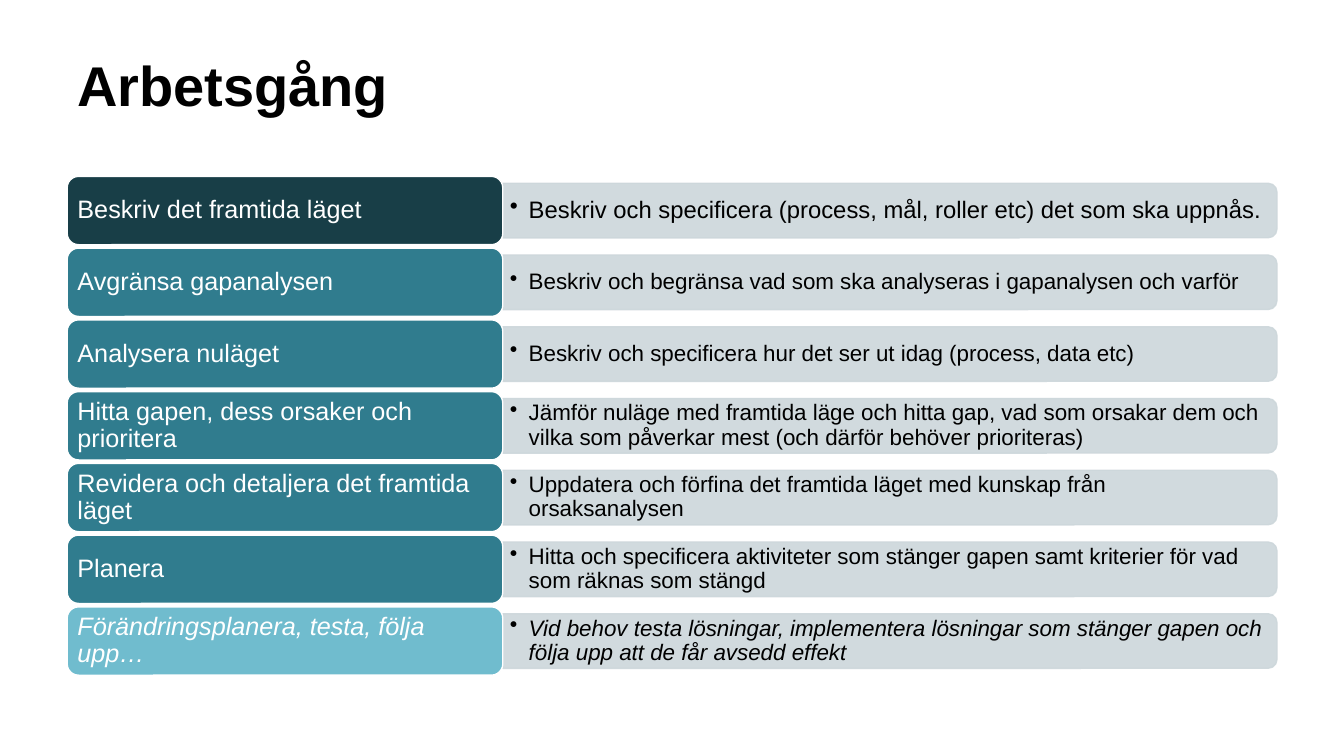
from dataclasses import dataclass

from lxml.etree import SubElement
from pptx import Presentation
from pptx.dml.color import RGBColor
from pptx.enum.shapes import MSO_SHAPE
from pptx.enum.text import MSO_ANCHOR
from pptx.oxml.ns import qn
from pptx.util import Pt


@dataclass(frozen=True)
class Theme:
    font: str = "Arial"
    ink: str = "000000"
    paper: str = "FFFFFF"
    bar: str = "CDD7DB"
    first: str = "183E47"
    step: str = "307C8E"
    last: str = "70BCCE"
    title: int = 40
    label: int = 18
    lead: int = 17
    note: int = 16


class Board:
    def __init__(self, slide, theme):
        self.slide = slide
        self.theme = theme

    def fill_text(self, shape, text, size, color, pad, space=0.9, bold=False,
                  slant=False, bullet=False, anchor=MSO_ANCHOR.MIDDLE):
        frame = shape.text_frame
        frame.word_wrap = True
        frame.vertical_anchor = anchor
        frame.margin_left = frame.margin_right = Pt(pad[0])
        frame.margin_top = frame.margin_bottom = Pt(pad[1])
        frame.text = text
        para = frame.paragraphs[0]
        para.line_spacing = space
        props = para._p.get_or_add_pPr()
        props.set("algn", "l")
        if bullet:
            props.set("marL", str(Pt(13.5)))
            props.set("indent", str(-Pt(13.5)))
            SubElement(props, qn("a:buChar"), char="•")
        font = para.runs[0].font
        font.name = self.theme.font
        font.size = Pt(size)
        font.bold = bold
        font.italic = slant
        font.color.rgb = RGBColor.from_string(color)

    def text(self, x, y, w, h, words, size, **style):
        box = self.slide.shapes.add_textbox(Pt(x), Pt(y), Pt(w), Pt(h))
        self.fill_text(box, words, size, self.theme.ink, **style)

    def shape(self, kind, x, y, w, h, fill, line):
        item = self.slide.shapes.add_shape(kind, Pt(x), Pt(y), Pt(w), Pt(h))
        item.shadow.inherit = False
        item.fill.solid()
        item.fill.fore_color.rgb = RGBColor.from_string(fill)
        item.line.color.rgb = RGBColor.from_string(line)
        item.line.width = Pt(1)
        return item

    def bar(self, x, mid, w, h):
        # A quarter turn puts the two round corners on the right
        color = self.theme.bar
        item = self.shape(MSO_SHAPE.ROUND_2_SAME_RECTANGLE,
                          x + (w - h) / 2, mid - w / 2, h, w, color, color)
        item.rotation = 90
        for tint in item._element.spPr.iter(qn("a:srgbClr")):
            SubElement(tint, qn("a:alpha"), val="90000")

    def label(self, x, y, w, h, words, fill, slant):
        item = self.shape(MSO_SHAPE.ROUNDED_RECTANGLE, x, y, w, h, fill,
                          self.theme.paper)
        self.fill_text(item, words, self.theme.label, self.theme.paper,
                       pad=(5, 5), slant=slant)


STEPS = [
    ("Beskriv det framtida läget",
     "Beskriv och specificera (process, mål, roller etc) det som ska uppnås."),
    ("Avgränsa gapanalysen",
     "Beskriv och begränsa vad som ska analyseras i gapanalysen och varför"),
    ("Analysera nuläget",
     "Beskriv och specificera hur det ser ut idag (process, data etc)"),
    ("Hitta gapen, dess orsaker och prioritera",
     "Jämför nuläge med framtida läge och hitta gap, vad som orsakar dem "
     "och vilka som påverkar mest (och därför behöver prioriteras)"),
    ("Revidera och detaljera det framtida läget",
     "Uppdatera och förfina det framtida läget med kunskap från "
     "orsaksanalysen"),
    ("Planera",
     "Hitta och specificera aktiviteter som stänger gapen samt kriterier "
     "för vad som räknas som stängd"),
    ("Förändringsplanera, testa, följa upp…",
     "Vid behov testa lösningar, implementera lösningar som stänger gapen "
     "och följa upp att de får avsedd effekt"),
]

LEFT, TOP, PITCH = 48, 126, 51.25
LABEL_W, LABEL_H = 311.2, 48.8
BAR_W, BAR_H = 553, 39
NOTE_W, NOTE_H = 551, 35.2


def main():
    deck = Presentation()
    deck.slide_width, deck.slide_height = Pt(960), Pt(540)
    theme = Theme()
    board = Board(deck.slides.add_slide(deck.slide_layouts[6]), theme)

    # Title
    board.text(LEFT, 28, 864, 90, "Arbetsgång", theme.title, pad=(7.2, 3.6),
               space=1.1, bold=True, anchor=MSO_ANCHOR.TOP)

    # One row per step: bar, note, label
    end = len(STEPS) - 1
    fills = {0: theme.first, end: theme.last}
    split = LEFT + LABEL_W
    for row, (name, note) in enumerate(STEPS):
        top = TOP + row * PITCH
        mid = top + LABEL_H / 2
        slant = row == end
        board.bar(split, mid, BAR_W, BAR_H)
        board.text(split, mid - NOTE_H / 2, NOTE_W, NOTE_H, note,
                   theme.note if row else theme.lead,
                   pad=(5, 2.6), slant=slant, bullet=True)
        board.label(LEFT, top, LABEL_W, LABEL_H, name,
                    fills.get(row, theme.step), slant)

    deck.save("out.pptx")


if __name__ == "__main__":
    main()
